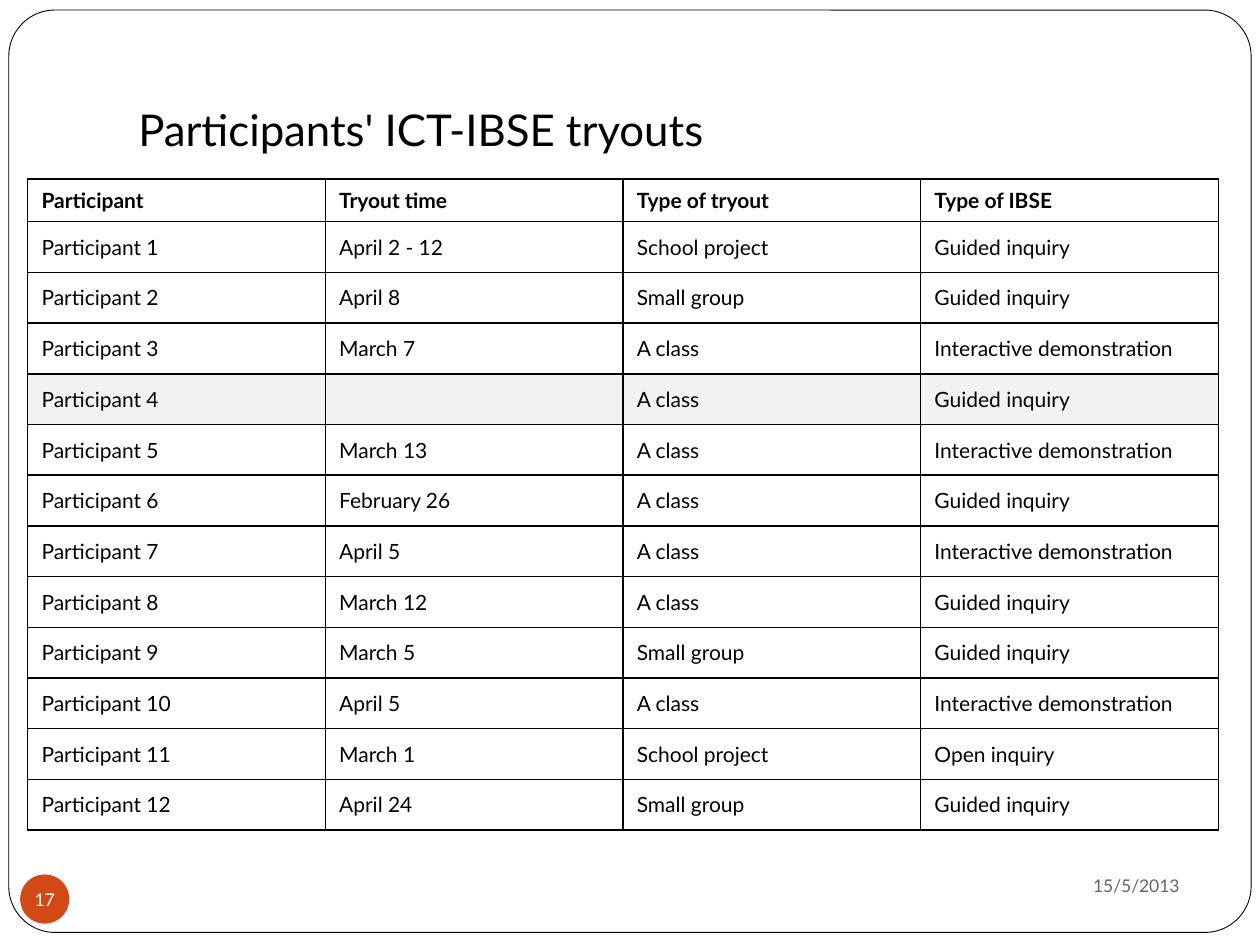
from dataclasses import dataclass

from lxml import etree
from pptx import Presentation
from pptx.dml.color import RGBColor
from pptx.enum.shapes import MSO_SHAPE
from pptx.enum.text import MSO_ANCHOR, PP_ALIGN
from pptx.oxml.ns import qn
from pptx.util import Inches, Pt


@dataclass(frozen=True)
class Theme:
    font: str = "Lato"
    ink: str = "000000"
    paper: str = "FFFFFF"
    muted: str = "696464"
    accent: str = "D34817"
    highlight: str = "F2F2F2"
    title_size: int = 25
    table_size: int = 12
    small_size: int = 10
    frame_line: float = 0.5
    cell_line: int = 1


THEME = Theme()
HEADERS = ("Participant", "Tryout time", "Type of tryout", "Type of IBSE")
# Time, type of tryout and type of IBSE, in order of participant number
TRYOUTS = (
    ("April 2 - 12", "School project", "Guided inquiry"),
    ("April 8", "Small group", "Guided inquiry"),
    ("March 7", "A class", "Interactive demonstration"),
    ("", "A class", "Guided inquiry"),
    ("March 13", "A class", "Interactive demonstration"),
    ("February 26", "A class", "Guided inquiry"),
    ("April 5", "A class", "Interactive demonstration"),
    ("March 12", "A class", "Guided inquiry"),
    ("March 5", "Small group", "Guided inquiry"),
    ("April 5", "A class", "Interactive demonstration"),
    ("March 1", "School project", "Open inquiry"),
    ("April 24", "Small group", "Guided inquiry"),
)


def color(value):
    return RGBColor.from_string(value)


def apply_format(target, values):
    for name, value in values.items():
        setattr(target, name, value)


def paint(target, value):
    target.fill.solid()
    target.fill.fore_color.rgb = color(value)


def margins(left, top, right, bottom):
    return {
        "margin_left": Inches(left), "margin_top": Inches(top),
        "margin_right": Inches(right), "margin_bottom": Inches(bottom),
    }


def write(frame, text, size, ink, align, bold=False):
    para = frame.paragraphs[0]
    para.alignment = align
    font = para.font
    if text:
        span = para.add_run()
        span.text = text
        font = span.font
    apply_format(font, {"name": THEME.font, "size": Pt(size), "bold": bold})
    font.color.rgb = color(ink)


def add_label(page, place, text, size, ink, align, frame_format):
    box = page.shapes.add_textbox(*map(Inches, place))
    apply_format(box.text_frame, {"word_wrap": True, **frame_format})
    write(box.text_frame, text, size, ink, align)


def add_panel(page, kind, place, fill):
    panel = page.shapes.add_shape(kind, *map(Inches, place))
    panel.shadow.inherit = False
    paint(panel, fill)
    return panel


def add_frame(page):
    frame = add_panel(page, MSO_SHAPE.ROUNDED_RECTANGLE,
                      (0.07, 0.08, 9.86, 7.32), THEME.paper)
    frame.adjustments[0] = 0.05
    frame.line.color.rgb = color(THEME.ink)
    frame.line.width = Pt(THEME.frame_line)


def add_page_number(page, number):
    badge = add_panel(page, MSO_SHAPE.OVAL, (0.16, 6.94, 0.39, 0.39), THEME.accent)
    badge.line.fill.background()
    apply_format(badge.text_frame, {
        "word_wrap": False, "vertical_anchor": MSO_ANCHOR.MIDDLE,
        **margins(0, 0, 0, 0)})
    write(badge.text_frame, number, THEME.small_size, THEME.paper, PP_ALIGN.CENTER)


def add_borders(cell):
    properties = cell._tc.get_or_add_tcPr()
    for side in ("a:lnL", "a:lnR", "a:lnT", "a:lnB"):
        line = etree.SubElement(properties, qn(side), w=str(Pt(THEME.cell_line)))
        fill = etree.SubElement(line, qn("a:solidFill"))
        etree.SubElement(fill, qn("a:srgbClr"), val=THEME.ink)


def add_tryout_table(page):
    rows = [HEADERS]
    rows += [(f"Participant {number}", *tryout)
             for number, tryout in enumerate(TRYOUTS, 1)]
    width, height, header_height = 9.45, 5.17, 0.34
    table = page.shapes.add_table(
        len(rows), len(HEADERS), Inches(0.22), Inches(1.42),
        Inches(width), Inches(height)).table
    for column in table.columns:
        column.width = Inches(width / len(HEADERS))

    for row_index, values in enumerate(rows):
        header = row_index == 0
        row = table.rows[row_index]
        row.height = Inches(
            header_height if header else (height - header_height) / len(TRYOUTS))
        # A tryout without a date is shaded
        fill = THEME.paper if all(values) else THEME.highlight
        for cell, text in zip(row.cells, values):
            add_borders(cell)
            paint(cell, fill)
            apply_format(cell, {"vertical_anchor": MSO_ANCHOR.MIDDLE,
                                **margins(0.11, 0, 0.11, 0)})
            write(cell.text_frame, text, THEME.table_size, THEME.ink,
                  PP_ALIGN.JUSTIFY, header)


def main():
    deck = Presentation()
    apply_format(deck, {"slide_width": Inches(10), "slide_height": Inches(7.5)})
    page = deck.slides.add_slide(deck.slide_layouts[6])

    # Frame and title
    add_frame(page)
    add_label(page, (1, 0.08, 8.5, 1.25), "Participants' ICT-IBSE tryouts",
              THEME.title_size, THEME.ink, PP_ALIGN.LEFT,
              {"vertical_anchor": MSO_ANCHOR.BOTTOM, **margins(0.1, 0.05, 0.1, 0.1)})

    # Footer
    add_label(page, (6.75, 6.77, 2.71, 0.52), "15/5/2013",
              THEME.small_size, THEME.muted, PP_ALIGN.RIGHT,
              {"vertical_anchor": MSO_ANCHOR.MIDDLE})
    add_page_number(page, "17")

    # Tryouts by participant
    add_tryout_table(page)
    deck.save("out.pptx")


if __name__ == "__main__":
    main()
